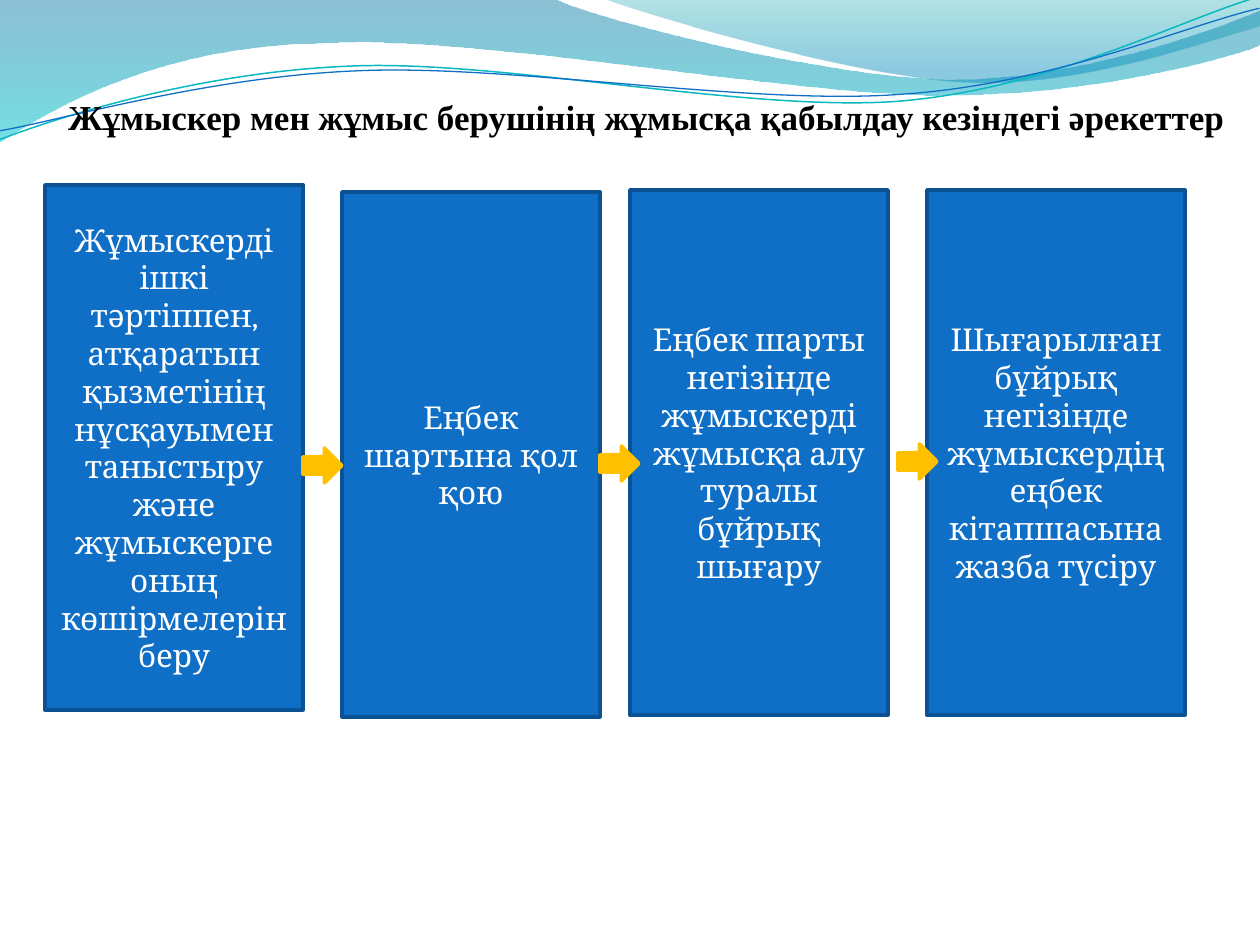
from dataclasses import dataclass

from lxml.etree import SubElement
from pptx import Presentation
from pptx.dml.color import RGBColor
from pptx.enum.shapes import MSO_SHAPE as Preset
from pptx.enum.text import MSO_ANCHOR as Anchor, MSO_AUTO_SIZE as AutoSize, PP_ALIGN as Align
from pptx.oxml.ns import qn
from pptx.util import Pt

EMU_PER_PX = 914400 / 126


@dataclass(frozen=True)
class Theme:
    card: str = "0F6FC6"
    card_edge: str = "0B5292"
    card_text: str = "FFFFFF"
    arrow: str = "FFC000"
    title: str = "000000"
    teal_line: str = "0AB8BF"
    blue_line: str = "0F6FC6"
    # Gradient stops: position, colour, opacity in percent
    wide_wave: tuple = ((0, "0074A1", 45), (1, "00C6CF", 55))
    right_wave: tuple = ((0, "00A1A9", 30), (0.8, "008BBF", 45))
    card_font: str = "Cambria"
    title_font: str = "Times New Roman"
    card_size: int = 18
    title_size: int = 20


def px(length):
    return round(length * EMU_PER_PX)


def rgb(colour):
    return RGBColor.from_string(colour)


def write(frame, text, *, font, size, colour, bold=False):
    """Put one centred paragraph in a text frame."""
    paragraph = frame.paragraphs[0]
    paragraph.alignment = Align.CENTER
    run = paragraph.add_run()
    run.text = text
    run.font.name = font
    run.font.size = Pt(size)
    run.font.bold = bold
    run.font.color.rgb = rgb(colour)


class SlideBuilder:
    def __init__(self, slide, theme):
        self.shapes = slide.shapes
        self.theme = theme

    def outline(self, segments, close):
        """Draw a start point, then lines (2 numbers) and Bézier curves (6)."""
        start, *rest = segments
        points = [pair for segment in rest for pair in zip(segment[::2], segment[1::2])]
        builder = self.shapes.build_freeform(*start, scale=EMU_PER_PX)
        builder.add_line_segments(points, close=close)
        shape = builder.convert_to_shape()
        shape.shadow.inherit = False

        # Join the three steps of each curve into one Bézier element
        steps = iter(list(shape._element.spPr.iter(qn("a:lnTo"))))
        for segment in rest:
            first = next(steps)
            if len(segment) == 6:
                first.tag = qn("a:cubicBezTo")
                for step in (next(steps), next(steps)):
                    first.append(step[0])
                    step.getparent().remove(step)
        return shape

    def wave(self, segments, stops):
        shape = self.outline(segments, close=True)
        shape.line.fill.background()
        shape.fill.gradient()
        shape.fill.gradient_angle = 270
        for stop, (position, colour, _) in zip(shape.fill.gradient_stops, stops):
            stop.position = position
            stop.color.rgb = rgb(colour)
        tints = shape._element.spPr.iter(qn("a:srgbClr"))
        for tint, (_, _, opacity) in zip(tints, stops):
            SubElement(tint, qn("a:alpha"), val=str(opacity * 1000))

    def ribbon(self, segments, colour, width):
        shape = self.outline(segments, close=False)
        shape.rotation = RIBBON_TILT
        shape.fill.background()
        shape.line.color.rgb = rgb(colour)
        shape.line.width = Pt(width)

    def block(self, preset, box, fill, edge):
        shape = self.shapes.add_shape(preset, *map(px, box))
        shape.shadow.inherit = False
        shape.fill.solid()
        shape.fill.fore_color.rgb = rgb(fill)
        shape.line.color.rgb = rgb(edge)
        shape.line.width = Pt(2)
        return shape

    def card(self, box, text):
        theme = self.theme
        frame = self.block(Preset.RECTANGLE, box, theme.card, theme.card_edge).text_frame
        frame.word_wrap = True
        frame.vertical_anchor = Anchor.MIDDLE
        write(frame, text, font=theme.card_font, size=theme.card_size, colour=theme.card_text)

    def arrow(self, box):
        self.block(Preset.STRIPED_RIGHT_ARROW, box, self.theme.arrow, self.theme.arrow)

    def title(self, box, text):
        theme = self.theme
        frame = self.shapes.add_textbox(*map(px, box)).text_frame
        frame.word_wrap = False
        frame.auto_size = AutoSize.SHAPE_TO_FIT_TEXT
        write(frame, text, font=theme.title_font, size=theme.title_size,
              colour=theme.title, bold=True)


# Header decoration, in px; the ribbons are given before their tilt
RIBBON_TILT = 357.3
WIDE_WAVE = [
    (0, 0), (554, -1), (600, 21, 837, 79, 955, 79), (1075, 79, 1207, 33, 1260, 11),
    (1261, 45), (1239, 55, 1096, 96, 940, 95), (784, 95, 481, 35, 324, 43),
    (163, 45, 58, 105, -1, 142), (0, 0),
]
RIGHT_WAVE = [
    (604, -1), (641, 14, 859, 78, 969, 82), (1079, 87, 1211, 40, 1260, 26),
    (1260, 0), (604, -1),
]
TEAL_RIBBON = [
    (-3, 110), (58, 90, 199, 52, 350, 53), (499, 53, 745, 118, 896, 114),
    (1049, 109, 1184, 45, 1260, 27),
]
BLUE_RIBBON = [
    (-2, 101), (57, 94, 207, 57, 357, 58), (509, 58, 750, 112, 902, 107),
    (1052, 104, 1186, 52, 1262, 38),
]

# Hiring steps: left, top, wording
STEPS = [
    (45, 185, "Жұмыскерді ішкі тәртіппен, атқаратын қызметінің нұсқауымен "
              "таныстыру және жұмыскерге оның көшірмелерін беру"),
    (342, 192, "Еңбек шартына қол қою"),
    (630, 190, "Еңбек шарты негізінде жұмыскерді жұмысқа алу туралы бұйрық шығару"),
    (927, 190, "Шығарылған бұйрық негізінде жұмыскердің еңбек кітапшасына "
               "жазба түсіру"),
]
CARD_SIZE = (258, 525)
ARROW_CORNERS = [(303, 448), (600, 446), (898, 444)]
ARROW_SIZE = (39, 35)


def main():
    deck = Presentation()
    deck.slide_width, deck.slide_height = px(1260), px(945)
    theme = Theme()
    page = SlideBuilder(deck.slides.add_slide(deck.slide_layouts[6]), theme)

    # Header waves and ribbons
    page.wave(WIDE_WAVE, theme.wide_wave)
    page.wave(RIGHT_WAVE, theme.right_wave)
    page.ribbon(TEAL_RIBBON, theme.teal_line, 0.85)
    page.ribbon(BLUE_RIBBON, theme.blue_line, 0.75)

    # Step cards, then the arrows between them
    for left, top, text in STEPS:
        page.card((left, top, *CARD_SIZE), text)
    for corner in ARROW_CORNERS:
        page.arrow((*corner, *ARROW_SIZE))

    # Title
    page.title((51, 89, 1191, 55),
               "Жұмыскер мен жұмыс берушінің жұмысқа қабылдау кезіндегі әрекеттер")

    deck.save("out.pptx")


if __name__ == "__main__":
    main()
